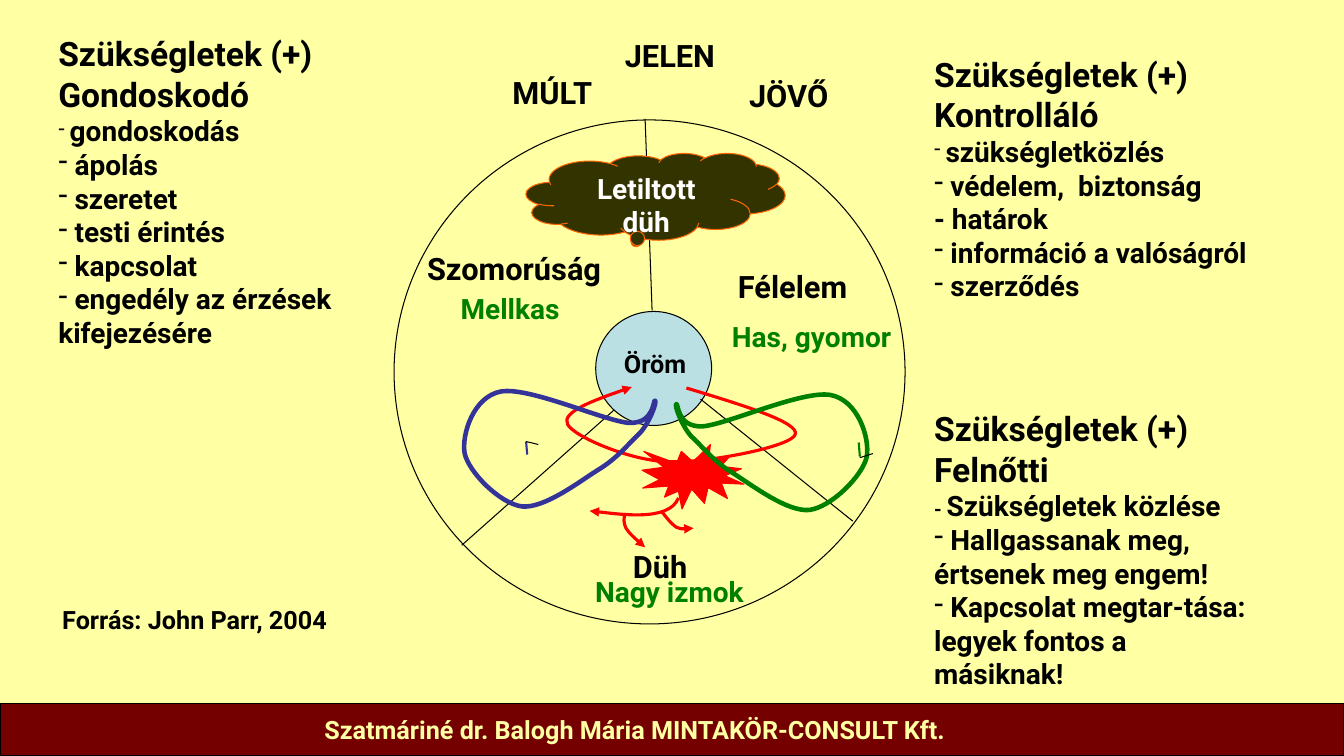
from lxml.etree import SubElement
from pptx import Presentation
from pptx.dml.color import RGBColor
from pptx.enum.shapes import MSO_CONNECTOR, MSO_SHAPE
from pptx.enum.text import MSO_ANCHOR, PP_ALIGN
from pptx.oxml.ns import qn
from pptx.util import Pt

COLORS = {
    "paper": "FFFFA3", "footer": "740000", "black": "000000", "white": "FFFFFF",
    "green": "008000", "blue": "333399", "red": "FF0000", "joy": "BBE0E3",
    "cloud": "333300", "orange": "FF6600",
}


class SlideBuilder:
    """Draws styled elements on the current slide, with all lengths in points."""

    def __init__(self, presentation):
        self.font = "Roboto"
        self.slide = presentation.slides.add_slide(presentation.slide_layouts[6])
        self.paint(self.slide.background.fill, "paper")

    def paint(self, fill, color):
        fill.solid()
        fill.fore_color.rgb = RGBColor.from_string(COLORS[color])

    def outline(self, line, color, width):
        self.paint(line.fill, color)
        line.width = Pt(width)

    def run(self, paragraph, text, size, color="black", bold=True):
        run = paragraph.add_run()
        run.text = text
        for name, value in {"name": self.font, "size": Pt(size), "bold": bold}.items():
            setattr(run.font, name, value)
        self.paint(run.font.fill, color)

    def shape(self, kind, box, fill=None, line="black", adjustments=()):
        shape = self.slide.shapes.add_shape(kind, *map(Pt, box))
        shape.shadow.inherit = False
        if fill:
            self.paint(shape.fill, fill)
        else:
            shape.fill.background()
        self.outline(shape.line, line, 0.75)
        for index, value in enumerate(adjustments):
            shape.adjustments[index] = value
        return shape

    def frame(self, box, side=7.2):
        frame = self.slide.shapes.add_textbox(*map(Pt, box)).text_frame
        settings = {"word_wrap": True, "margin_left": Pt(side), "margin_right": Pt(side)}
        for name, value in settings.items():
            setattr(frame, name, value)
        return frame

    def label(self, text, box, size=22, color="black", align=PP_ALIGN.LEFT, side=7.2):
        paragraph = self.frame(box, side).paragraphs[0]
        paragraph.alignment = align
        self.run(paragraph, text, size, color)

    def needs(self, kind, box, items):
        frame = self.frame(box)
        self.run(frame.paragraphs[0], "Szükségletek (+)", 24)
        self.run(frame.add_paragraph(), kind, 24)
        for bulleted, runs in items:
            paragraph = frame.add_paragraph()
            if bulleted:
                properties = paragraph._p.get_or_add_pPr()
                SubElement(properties, qn("a:buFontTx"))
                SubElement(properties, qn("a:buChar"), char="-")
            for text, size in runs:
                self.run(paragraph, text, size)

    def line(self, start, end, color="black", width=0.75):
        connector = self.slide.shapes.add_connector(
            MSO_CONNECTOR.STRAIGHT, *map(Pt, (*start, *end)))
        self.outline(connector.line, color, width)
        SubElement(connector._element.spPr, qn("a:effectLst"))

    def curve(self, points, color, width, closed=False):
        start, *rest = [(Pt(x), Pt(y)) for x, y in points]
        builder = self.slide.shapes.build_freeform(*start)
        builder.add_line_segments(rest, close=closed)
        shape = builder.convert_to_shape()
        shape.fill.background()
        self.outline(shape.line, color, width)
        segments = list(shape._element.iter(qn("a:lnTo")))[:len(rest)]
        for first in range(0, len(rest), 3):
            bezier = SubElement(segments[first].getparent(), qn("a:cubicBezTo"))
            segments[first].addprevious(bezier)
            for segment in segments[first:first + 3]:
                bezier.append(segment[0])
                segment.getparent().remove(segment)
        if not closed:
            SubElement(shape.line._get_or_add_ln(), qn("a:tailEnd"), type="triangle")
        shape.shadow.inherit = False


def bullets(*texts):
    return [(True, [(text, 20)]) for text in texts]


def main():
    presentation = Presentation()
    presentation.slide_width, presentation.slide_height = Pt(960), Pt(540)
    page = SlideBuilder(presentation)
    center = PP_ALIGN.CENTER

    page.shape(MSO_SHAPE.RECTANGLE, (0, 502.5, 960, 37.5), "footer")
    page.label("Szatmáriné dr. Balogh Mária MINTAKÖR-CONSULT Kft.",
               (224.6, 507, 718.6, 29), 18, "paper")

    page.shape(MSO_SHAPE.OVAL, (281.5, 85.7, 365, 360))
    page.shape(MSO_SHAPE.OVAL, (425.5, 222.5, 82.8, 81.4), "joy")
    for start, end in [((465.8, 221.8), (460.8, 85)), ((438.5, 293), (329.8, 389.5)),
                       ((500.4, 285.1), (609.1, 372.2))]:
        page.line(start, end)

    for text, box in [("Szomorúság", (298, 175, 164, 34)), ("Félelem", (520, 188, 132, 34)),
                      ("Düh", (445, 387.4, 60, 34))]:
        page.label(text, box)
    page.label("Öröm", (445.7, 245.5, 60, 32), 18, side=0)
    for text, left, top in [("Nagy izmok", 403.2, 406.8), ("Has, gyomor", 504.7, 224.6),
                            ("Mellkas", 289.4, 204.5)]:
        page.label(text, (left, top, 150, 32), 20, "green", center)

    cloud = page.shape(MSO_SHAPE.CLOUD_CALLOUT, (375.8, 109.4, 185, 62), "cloud",
                       "orange", (-0.074, 0.511))
    cloud.text_frame.vertical_anchor = MSO_ANCHOR.TOP
    cloud.text_frame.paragraphs[0].alignment = center
    page.run(cloud.text_frame.paragraphs[0], "Letiltott düh", 20, "white")

    page.curve([(490.3, 277.2), (530.6, 289.4), (571, 301.7), (568.1, 310.3),
                (565.9, 319), (504, 331.2), (476.6, 329.8), (450, 329),
                (409.7, 311.8), (405.4, 303.1), (401, 294.5), (426.2, 285.1),
                (451.4, 276.5)], "red", 2.25)
    page.shape(MSO_SHAPE.EXPLOSION1, (458.6, 317.5, 72.7, 46.1), "red", "red")
    for arrow in [
        [(484.6, 355.7), (478.1, 373), (421.9, 365), (421.2, 365)],
        [(472.3, 365), (475.9, 369.4), (479.5, 374.4), (483.1, 376.6),
         (486.7, 378), (491, 378), (495.4, 377.3)],
        [(446.4, 366.5), (445.7, 370), (445, 373), (447.1, 377.3),
         (450, 381.6), (455, 385.9), (460.8, 391)],
    ]:
        page.curve(arrow, "red", 2.25)

    loop = [(483.1, 288.7), (484.6, 287.3), (483.1, 305.3), (501.8, 304.6),
            (519.8, 303.1), (573.1, 278.6), (593.3, 282.2), (612.7, 285.8),
            (621.4, 312.5), (619.2, 326.2), (616.3, 339.8), (594, 362.2),
            (578.2, 364.3), (562.3, 365.8), (537.8, 347), (524.2, 338.4),
            (509.8, 329.8), (501.8, 319), (493.9, 311.8), (486.7, 303.8),
            (481.7, 289.4), (483.1, 288.7)]
    page.curve(loop, "green", 3.25, True)
    page.curve([(951.1 - x, y - 2.5) for x, y in loop], "blue", 3.25, True)

    page.needs("Gondoskodó", (34.6, 20.2, 285.8, 234.7),
               [(True, [(" ", 14), ("gondoskodás", 20)])]
               + bullets(" ápolás", " szeretet", " testi érintés", " kapcsolat",
                         " engedély az érzések kifejezésére"))
    page.needs("Kontrolláló", (660.2, 34.9, 285, 204),
               [(True, [(" ", 14), ("szükségletközlés", 20)])]
               + bullets(" védelem,  biztonság") + [(False, [("- határok", 20)])]
               + bullets(" információ a valóságról", " szerződés"))
    page.needs("Felnőtti", (660.2, 288, 245.5, 211),
               [(False, [("- ", 14), ("Szükségletek közlése", 20)])]
               + bullets(" Hallgassanak meg, értsenek meg engem!",
                         " Kapcsolat megtar-tása: legyek fontos a másiknak!"))
    page.label("Forrás: John Parr, 2004", (37.4, 428.4, 204.5, 51), 18)

    for start, end, color, width in [
        ((375.8, 315.4), (376.6, 324.7), "blue", 1.5),
        ((375.8, 315.4), (384.5, 317.5), "black", 0.75),
        ((613.4, 316.1), (614.2, 326.2), "green", 1.5),
        ((614.2, 326.9), (623.5, 324), "black", 0.75),
    ]:
        page.line(start, end, color, width)

    for text, left, top, width in [("MÚLT", 348.5, 49, 92), ("JÖVŐ", 523.4, 51, 80),
                                   ("JELEN", 430.6, 23, 95.8)]:
        page.label(text, (left, top, width, 34), align=center)

    presentation.save("out.pptx")


if __name__ == "__main__":
    main()
